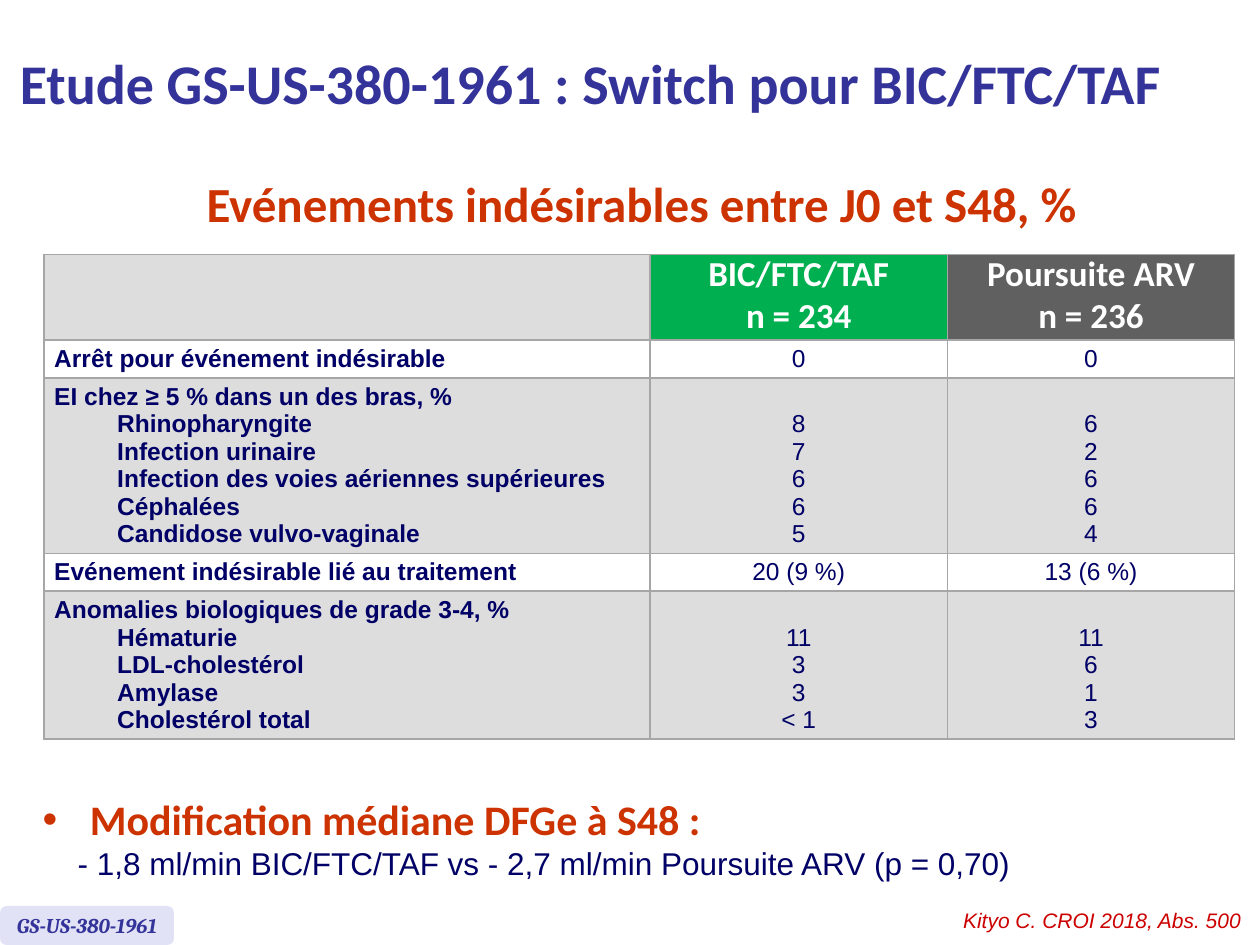
from dataclasses import dataclass

from lxml.etree import SubElement
from pptx import Presentation
from pptx.dml.color import RGBColor as RGB
from pptx.enum.shapes import MSO_SHAPE as Shape
from pptx.enum.text import MSO_ANCHOR as Anchor, PP_ALIGN as Align
from pptx.oxml.ns import qn
from pptx.util import Pt


@dataclass(frozen=True)
class Style:
    font: str
    size: float
    color: str
    bold: bool = False
    italic: bool = False


@dataclass(frozen=True)
class Theme:
    title: Style = Style("Calibri", 32, "333399", bold=True)
    subtitle: Style = Style("Calibri", 28, "CC3300", bold=True)
    header: Style = Style("Calibri", 20, "FFFFFF", bold=True)
    label: Style = Style("Arial", 14, "000066", bold=True)
    value: Style = Style("Arial", 14, "000066")
    finding: Style = Style("Calibri", 24, "CC3300", bold=True)
    detail: Style = Style("Arial", 18, "000066")
    citation: Style = Style("Arial", 12, "CC0000", italic=True)
    tag: Style = Style("Cambria", 12, "333399", bold=True, italic=True)
    tag_fill: str = "E2E2F6"
    border: str = "A6A6A6"
    shaded: str = "DDDDDD"
    plain: str = "FFFFFF"
    switch_arm: str = "00B050"
    control_arm: str = "606060"


THEME = Theme()

ARMS = [(["BIC/FTC/TAF", "n = 234"], THEME.switch_arm),
        (["Poursuite ARV", "n = 236"], THEME.control_arm)]

# Row height, fill, labels (heading first), values of each arm
EVENTS = [
    (21.6, THEME.plain, ["Arrêt pour événement indésirable"], ["0"], ["0"]),
    (96.5, THEME.shaded,
     ["EI chez ≥ 5 % dans un des bras, %", "Rhinopharyngite",
      "Infection urinaire", "Infection des voies aériennes supérieures",
      "Céphalées", "Candidose vulvo-vaginale"],
     ["8", "7", "6", "6", "5"], ["6", "2", "6", "6", "4"]),
    (21.6, THEME.plain, ["Evénement indésirable lié au traitement"],
     ["20 (9 %)"], ["13 (6 %)"]),
    (82, THEME.shaded,
     ["Anomalies biologiques de grade 3-4, %", "Hématurie",
      "LDL-cholestérol", "Amylase", "Cholestérol total"],
     ["11", "3", "3", "< 1"], ["11", "6", "1", "3"]),
]


def write(frame, lines, style, align=Align.LEFT):
    """Write one paragraph per line and return the paragraphs."""
    frame.text = "\n".join(lines)
    for paragraph in frame.paragraphs:
        paragraph.alignment = align
        for run in paragraph.runs:
            font = run.font
            font.name, font.size = style.font, Pt(style.size)
            font.bold, font.italic = style.bold, style.italic
            font.color.rgb = RGB.from_string(style.color)
    return frame.paragraphs


def indent(paragraph, left, first=0):
    props = paragraph._p.get_or_add_pPr()
    props.set("marL", str(Pt(left)))
    props.set("indent", str(Pt(first)))
    return props


def add_text(slide, box, line, style, align=Align.LEFT, anchor=Anchor.TOP):
    frame = slide.shapes.add_textbox(*map(Pt, box)).text_frame
    frame.word_wrap = True
    frame.vertical_anchor = anchor
    return write(frame, [line], style, align)[0]


def fill_cell(cell, color, lines=(), style=None, align=Align.CENTER,
              anchor=Anchor.MIDDLE):
    cell.margin_left = cell.margin_right = Pt(5.8)
    cell.margin_top = cell.margin_bottom = Pt(2.9)
    cell.vertical_anchor = anchor
    props = cell._tc.get_or_add_tcPr()
    for side in ("a:lnL", "a:lnR", "a:lnT", "a:lnB"):
        line = SubElement(props, qn(side), w=str(Pt(1)))
        SubElement(SubElement(line, qn("a:solidFill")), qn("a:srgbClr"),
                   val=THEME.border)
    cell.fill.solid()
    cell.fill.fore_color.rgb = RGB.from_string(color)
    return write(cell.text_frame, lines, style, align) if lines else ()


def add_events_table(slide):
    heights = [39.6] + [event[0] for event in EVENTS]
    widths = [346.3, 169.9, 164.2]
    table = slide.shapes.add_table(
        len(heights), len(widths), Pt(25.2), Pt(145.4),
        Pt(sum(widths)), Pt(sum(heights))).table
    table.first_row = table.horz_banding = False
    for column, width in zip(table.columns, widths):
        column.width = Pt(width)
    for row, height in zip(table.rows, heights):
        row.height = Pt(height)

    # Header: one coloured cell per arm
    fill_cell(table.cell(0, 0), THEME.shaded)
    for col, (lines, color) in enumerate(ARMS, 1):
        name, count = fill_cell(table.cell(0, col), color, lines, THEME.header)
        name.line_spacing = count.line_spacing = 0.8
        count.space_before = Pt(4)

    # Body: values sit at the bottom, level with the indented labels
    for row, (_, color, labels, *arms) in enumerate(EVENTS, 1):
        _, *details = fill_cell(table.cell(row, 0), color, labels,
                                THEME.label, Align.LEFT)
        for detail in details:
            detail.level = 1
            indent(detail, 36)
        anchor = Anchor.BOTTOM if details else Anchor.MIDDLE
        for col, values in enumerate(arms, 1):
            fill_cell(table.cell(row, col), color, values, THEME.value,
                      anchor=anchor)


def add_finding(slide):
    finding = add_text(slide, (17.3, 450, 704, 58.3),
                       "Modification médiane DFGe à S48 :", THEME.finding)
    props = indent(finding, 27, -27)
    SubElement(props, qn("a:buFont"), typeface="Arial")
    SubElement(props, qn("a:buChar"), char="•")

    detail = finding._parent.add_paragraph()
    detail.text = ("- 1,8 ml/min BIC/FTC/TAF vs - 2,7 ml/min "
                   "Poursuite ARV (p = 0,70)")
    indent(detail, 20)
    font = detail.runs[0].font
    font.name, font.size = THEME.detail.font, Pt(THEME.detail.size)
    font.color.rgb = RGB.from_string(THEME.detail.color)


def add_study_tag(slide):
    tag = slide.shapes.add_shape(Shape.ROUNDED_RECTANGLE, Pt(0), Pt(517.7),
                                 Pt(99.4), Pt(22.3))
    tag.shadow.inherit = False
    tag.fill.solid()
    tag.fill.fore_color.rgb = RGB.from_string(THEME.tag_fill)
    tag.line.fill.background()
    tag.text_frame.word_wrap = False
    tag.text_frame.vertical_anchor = Anchor.MIDDLE
    write(tag.text_frame, ["GS-US-380-1961"], THEME.tag, Align.CENTER)


def main():
    deck = Presentation()
    deck.slide_width, deck.slide_height = Pt(720), Pt(540)
    slide = deck.slides.add_slide(deck.slide_layouts[6])

    # Results
    add_events_table(slide)
    add_finding(slide)

    # Source and study
    add_text(slide, (464.4, 514.8, 252, 21.6), "Kityo C. CROI 2018, Abs. 500",
             THEME.citation, Align.RIGHT)
    add_study_tag(slide)

    # Titles
    subtitle = add_text(slide, (70.6, 113.8, 591.8, 25.9),
                        "Evénements indésirables entre J0 et S48, %",
                        THEME.subtitle, Align.CENTER)
    subtitle.line_spacing = Pt(15.2)
    add_text(slide, (4.3, 3.6, 679, 87.1),
             "Etude GS-US-380-1961 : Switch pour BIC/FTC/TAF",
             THEME.title, anchor=Anchor.MIDDLE)

    deck.save("out.pptx")


if __name__ == "__main__":
    main()
